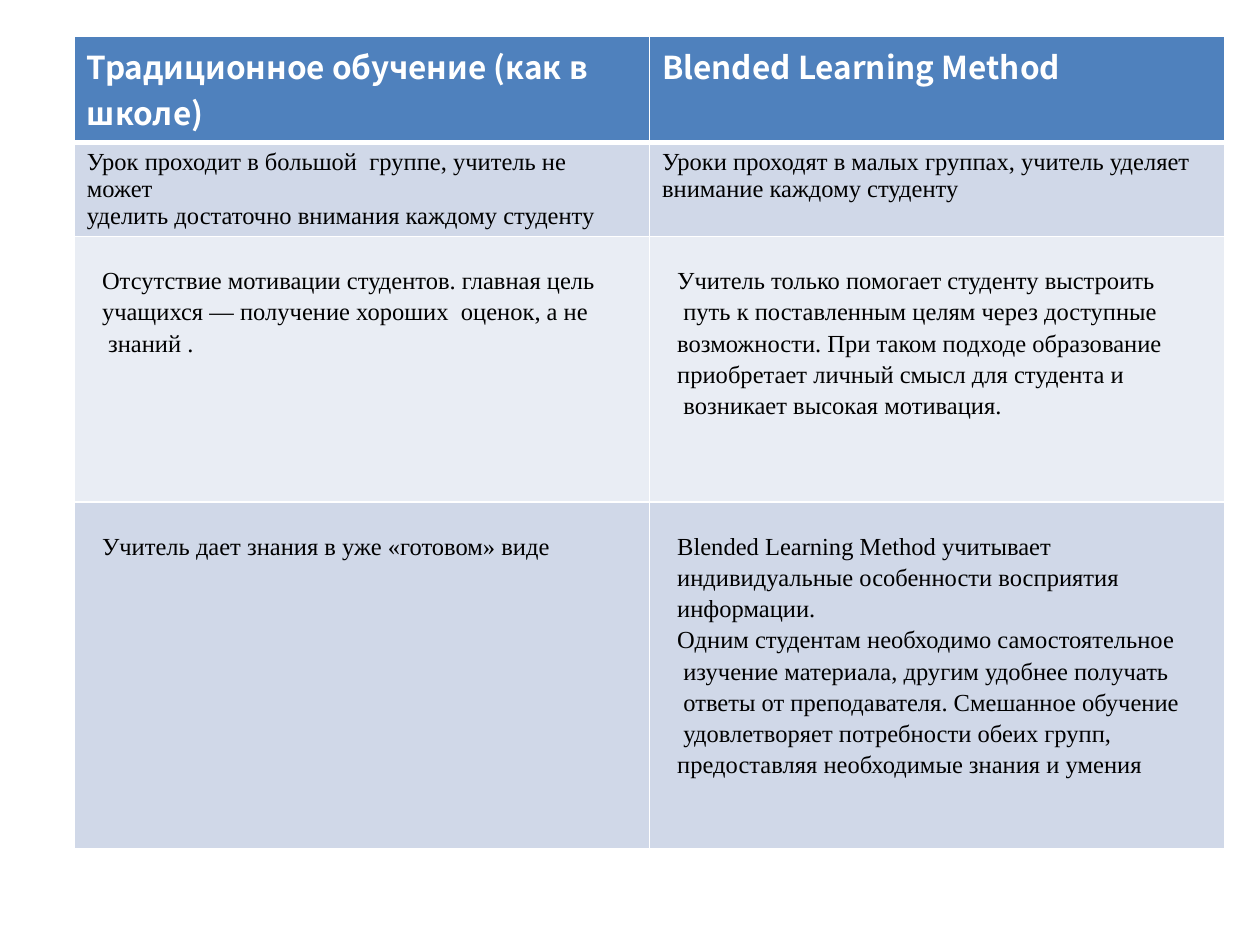
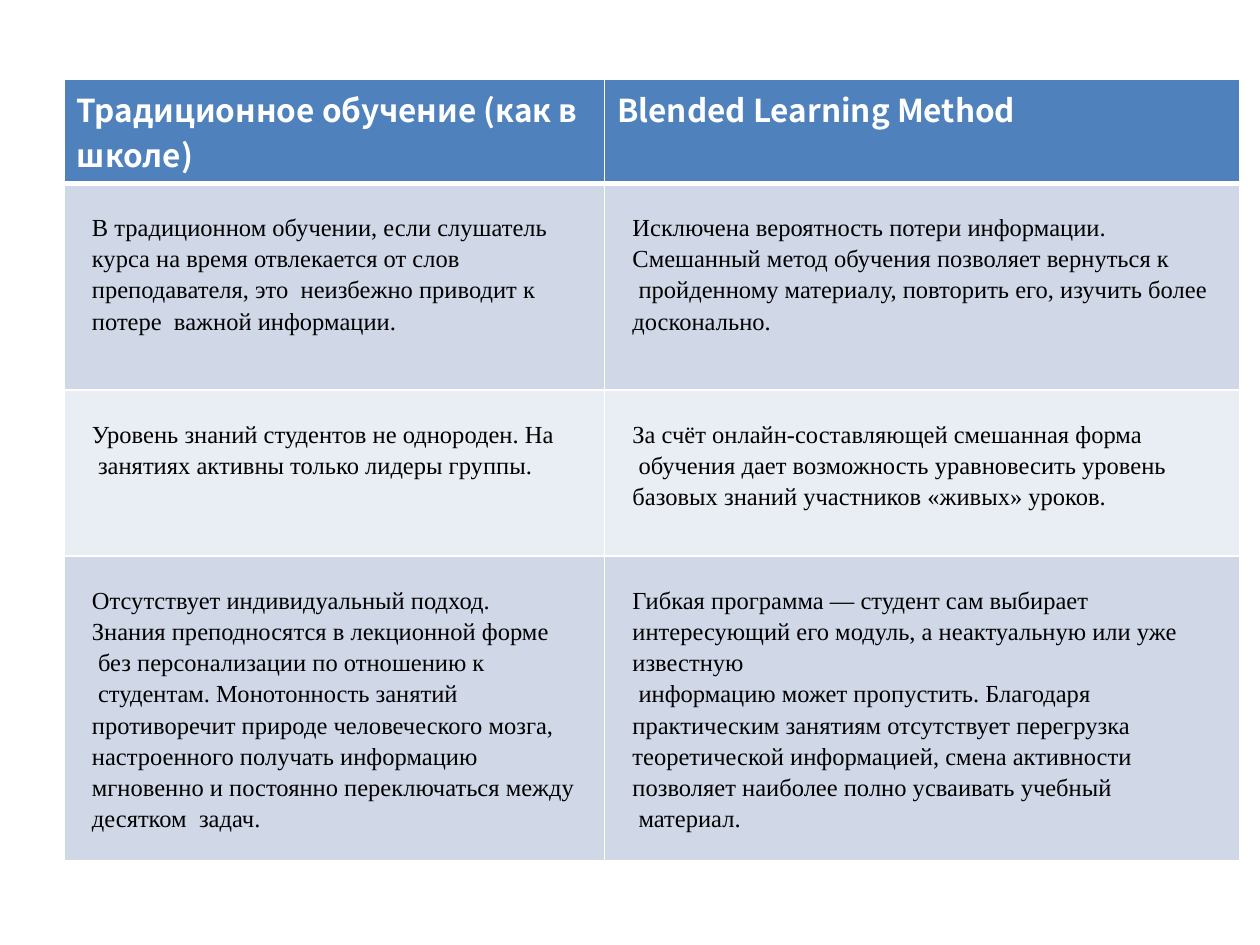
from dataclasses import dataclass

from lxml import etree
from pptx import Presentation
from pptx.dml.color import RGBColor
from pptx.oxml.ns import qn
from pptx.util import Inches, Pt

BLANK_LAYOUT = 6
GRID_COLUMNS, GRID_ROWS = 100, 75
LEFT_HEADING = "Традиционное обучение (как в школе)"
RIGHT_HEADING = "Blended Learning Method"


@dataclass(frozen=True)
class Theme:
    """Colours, fonts and sizes shared by both slides."""

    header_fill: str = "4F81BD"
    band_fills: tuple = ("D0D8E8", "E9EDF4")
    rule: str = "FFFFFF"
    header_text: str = "FFFFFF"
    body_text: str = "000000"
    header_font: str = "Noto Sans CJK KR"
    body_font: str = "Times New Roman"
    header_size: int = 18
    body_size: int = 14
    thin: int = 1
    thick: int = 3
    roomy_margin: float = 0.22
    roomy_spacing: float = 1.15


@dataclass(frozen=True)
class Comparison:
    """One table row: its height in grid rows and its two texts."""

    height: float
    left: str
    right: str
    roomy: bool = True


class ComparisonDeck:
    """Holds the theme, the deck and the current page."""

    def __init__(self, theme):
        """Start an empty 4:3 deck."""
        self.theme = theme
        self.deck = Presentation()
        self.deck.slide_width, self.deck.slide_height = Inches(10), Inches(7.5)
        self.page = None

    def add_page(self):
        """Add a blank page and make it current."""
        self.page = self.deck.slides.add_slide(self.deck.slide_layouts[BLANK_LAYOUT])

    def across(self, columns):
        """Turn grid columns into a length."""
        return round(self.deck.slide_width * columns / GRID_COLUMNS)

    def down(self, rows):
        """Turn grid rows into a length."""
        return round(self.deck.slide_height * rows / GRID_ROWS)

    def add_borders(self, cell, top, bottom):
        """Rule all four sides of a cell."""
        properties = cell._tc.get_or_add_tcPr()
        widths = {"L": self.theme.thin, "R": self.theme.thin, "T": top, "B": bottom}
        for side, width in widths.items():
            line = etree.SubElement(properties, qn(f"a:ln{side}"), w=str(Pt(width)))
            fill = etree.SubElement(line, qn("a:solidFill"))
            etree.SubElement(fill, qn("a:srgbClr"), val=self.theme.rule)

    def fill_cell(self, cell, text, row_index, roomy):
        """Write, rule and colour one cell according to its row."""
        theme = self.theme
        header = row_index == 0
        self.add_borders(
            cell,
            top=theme.thick if row_index == 1 else theme.thin,
            bottom=theme.thick if header else theme.thin,
        )
        fill = theme.header_fill if header else theme.band_fills[(row_index - 1) % 2]
        cell.fill.solid()
        cell.fill.fore_color.rgb = RGBColor.from_string(fill)
        if roomy:
            margin = Inches(theme.roomy_margin)
            cell.margin_left = cell.margin_right = margin
            cell.margin_top = cell.margin_bottom = margin
        cell.text = text
        colour = theme.header_text if header else theme.body_text
        for para in cell.text_frame.paragraphs:
            if roomy:
                para.line_spacing = theme.roomy_spacing
            para.font.name = theme.header_font if header else theme.body_font
            para.font.size = Pt(theme.header_size if header else theme.body_size)
            para.font.bold = header
            para.font.color.rgb = RGBColor.from_string(colour)

    def add_comparison(self, left, top, height, widths, rows):
        """Add a two-column comparison table."""
        frame = self.page.shapes.add_table(
            len(rows), len(widths), self.across(left), self.down(top),
            self.across(sum(widths)), self.down(height),
        )
        table = frame.table
        for column, width in zip(table.columns, widths):
            column.width = self.across(width)
        for index, row in enumerate(rows):
            table.rows[index].height = self.down(row.height)
            for column, text in enumerate((row.left, row.right)):
                self.fill_cell(table.cell(index, column), text, index, row.roomy)
        frame.height = self.down(height)


MOTIVATION_ROWS = [
    Comparison(8.4, LEFT_HEADING.replace(" школе", "\nшколе"), RIGHT_HEADING, False),
    Comparison(
        6.8,
        "Урок проходит в большой  группе, учитель не может\n"
        "уделить достаточно внимания каждому студенту",
        "Уроки проходят в малых группах, учитель уделяет\n"
        "внимание каждому студенту",
        False,
    ),
    Comparison(
        21.1,
        "Отсутствие мотивации студентов. главная цель\n"
        "учащихся — получение хороших  оценок, а не\n"
        " знаний .",
        "Учитель только помогает студенту выстроить\n"
        " путь к поставленным целям через доступные\n"
        "возможности. При таком подходе образование\n"
        "приобретает личный смысл для студента и\n"
        " возникает высокая мотивация.",
    ),
    Comparison(
        27.5,
        "Учитель дает знания в уже «готовом» виде",
        "Blended Learning Method учитывает индивидуальные особенности "
        "восприятия информации.\n"
        "Одним студентам необходимо самостоятельное\n"
        " изучение материала, другим удобнее получать\n"
        " ответы от преподавателя. Смешанное обучение\n"
        " удовлетворяет потребности обеих групп,\n"
        "предоставляя необходимые знания и умения",
    ),
]

FLEXIBILITY_ROWS = [
    Comparison(7.6, LEFT_HEADING, RIGHT_HEADING, False),
    Comparison(
        16.4,
        "В традиционном обучении, если слушатель\n"
        "курса на время отвлекается от слов\n"
        "преподавателя, это  неизбежно приводит к\n"
        "потере  важной информации.",
        "Исключена вероятность потери информации.\n"
        "Смешанный метод обучения позволяет вернуться к\n"
        " пройденному материалу, повторить его, изучить более досконально.",
    ),
    Comparison(
        13.2,
        "Уровень знаний студентов не однороден. На\n"
        " занятиях активны только лидеры группы.",
        "За счёт онлайн-составляющей смешанная форма\n"
        " обучения дает возможность уравновесить уровень\n"
        "базовых знаний участников «живых» уроков.",
    ),
    Comparison(
        13.2,
        "Отсутствует индивидуальный подход.\n"
        "Знания преподносятся в лекционной форме\n"
        " без персонализации по отношению к\n"
        " студентам. Монотонность занятий\n"
        "противоречит природе человеческого мозга,\n"
        "настроенного получать информацию\n"
        "мгновенно и постоянно переключаться между\n"
        "десятком  задач.",
        "Гибкая программа — студент сам выбирает интересующий его модуль, "
        "а неактуальную или уже известную\n"
        " информацию может пропустить. Благодаря\n"
        "практическим занятиям отсутствует перегрузка\n"
        "теоретической информацией, смена активности\n"
        "позволяет наиболее полно усваивать учебный\n"
        " материал.",
    ),
]


def main():
    """Build and save both comparison slides."""
    slides = ComparisonDeck(Theme())
    slides.add_page()
    slides.add_comparison(5.9, 2.9, 63.8, (45.65, 45.65), MOTIVATION_ROWS)
    slides.add_page()
    slides.add_comparison(5.1, 6.3, 62.8, (42.9, 50.4), FLEXIBILITY_ROWS)
    slides.deck.save("out.pptx")


if __name__ == "__main__":
    main()
